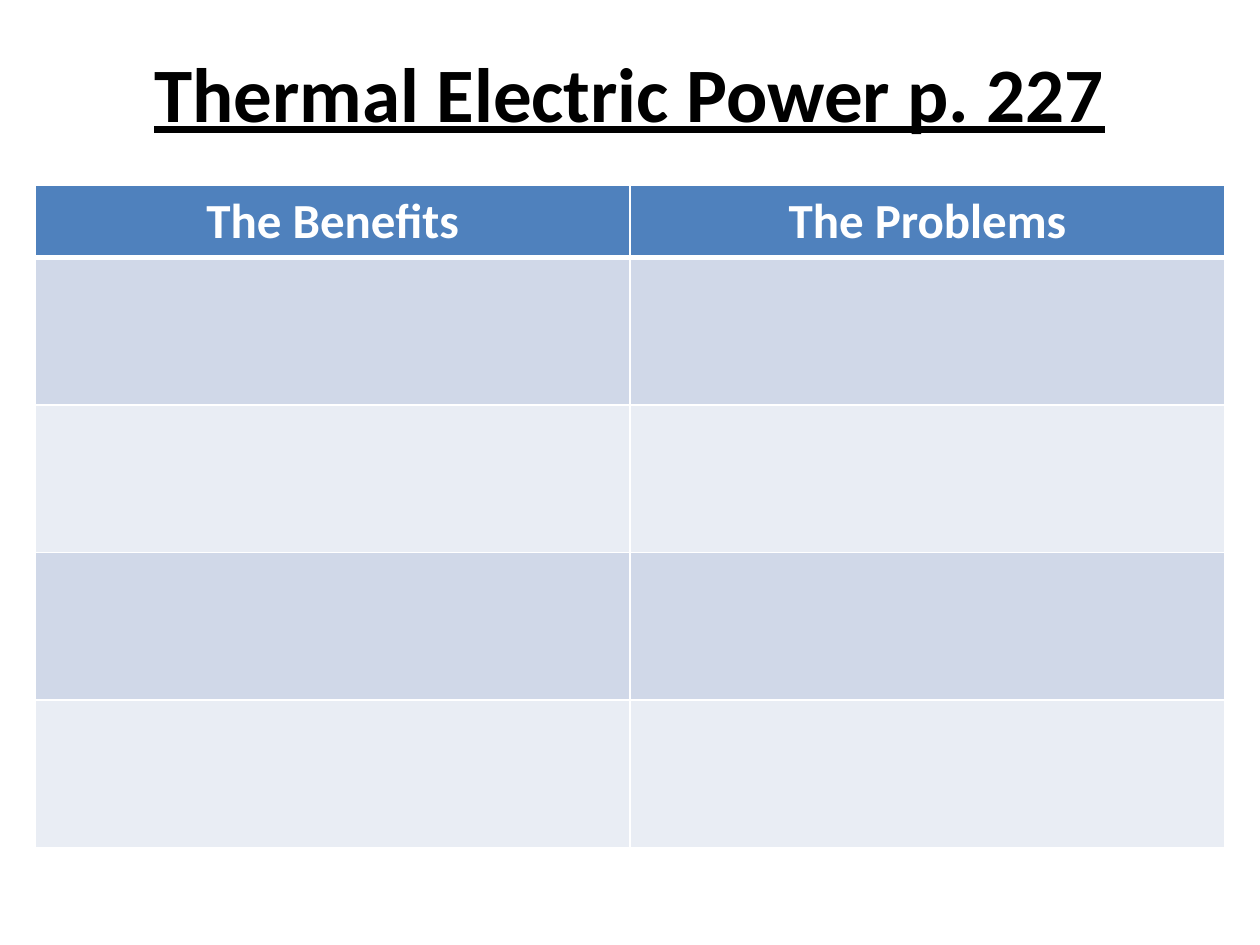
from dataclasses import dataclass

from lxml.etree import SubElement
from pptx import Presentation
from pptx.dml.color import RGBColor
from pptx.enum.text import MSO_ANCHOR, PP_ALIGN
from pptx.oxml.ns import qn
from pptx.util import Inches, Pt

BLACK = RGBColor(0x00, 0x00, 0x00)
WHITE = RGBColor(0xFF, 0xFF, 0xFF)
HEADER_BLUE = RGBColor(0x4F, 0x81, 0xBD)
BAND_DARK = RGBColor(0xD0, 0xD8, 0xE8)
BAND_LIGHT = RGBColor(0xE9, 0xED, 0xF4)


@dataclass(frozen=True)
class RowStyle:
    height: float
    fill: RGBColor
    top_line: float = 1
    bottom_line: float = 1


HEADINGS = ("The Benefits", "The Problems")
ROWS = [RowStyle(0.55, HEADER_BLUE, bottom_line=3)] + [
    RowStyle(1.17, BAND_LIGHT if i % 2 else BAND_DARK, top_line=1 if i else 3)
    for i in range(4)
]
COLUMN_WIDTH = 4.72


def write_text(frame, text: str, *, size: float, color: RGBColor,
               underline: bool = False) -> None:
    """Put one centred bold line into a text frame."""
    paragraph = frame.paragraphs[0]
    paragraph.alignment = PP_ALIGN.CENTER
    run = paragraph.add_run()
    run.text = text
    font = run.font
    font.name, font.size, font.bold = "Calibri", Pt(size), True
    font.underline = underline
    font.color.rgb = color


def style_cell(cell, style: RowStyle) -> None:
    """Draw the white cell borders, then the fill, in schema order."""
    properties = cell._tc.get_or_add_tcPr()
    widths = {"L": 1, "R": 1, "T": style.top_line, "B": style.bottom_line}
    for side, width in widths.items():
        line = SubElement(properties, qn(f"a:ln{side}"), w=str(Pt(width)))
        solid = SubElement(line, qn("a:solidFill"))
        SubElement(solid, qn("a:srgbClr"), val=str(WHITE))
    cell.fill.solid()
    cell.fill.fore_color.rgb = style.fill


def main() -> None:
    presentation = Presentation()
    presentation.slide_width, presentation.slide_height = Inches(10), Inches(7.5)
    slide = presentation.slides.add_slide(presentation.slide_layouts[5])

    # Title
    title = slide.shapes.title
    title.left, title.top = Inches(0.5), Inches(0.3)
    title.width, title.height = Inches(9), Inches(0.85)
    title.text_frame.vertical_anchor = MSO_ANCHOR.MIDDLE
    write_text(title.text_frame, "Thermal Electric Power p. 227",
               size=44, color=BLACK, underline=True)

    # Benefits and problems table
    comparison = slide.shapes.add_table(
        len(ROWS), len(HEADINGS), Inches(0.28), Inches(1.47),
        Inches(COLUMN_WIDTH * len(HEADINGS)),
        Inches(sum(row.height for row in ROWS))).table
    for column in comparison.columns:
        column.width = Inches(COLUMN_WIDTH)
    for row, style in zip(comparison.rows, ROWS):
        row.height = Inches(style.height)
        for cell in row.cells:
            style_cell(cell, style)
    for cell, heading in zip(comparison.rows[0].cells, HEADINGS):
        write_text(cell.text_frame, heading, size=28, color=WHITE)

    presentation.save("out.pptx")


if __name__ == "__main__":
    main()
